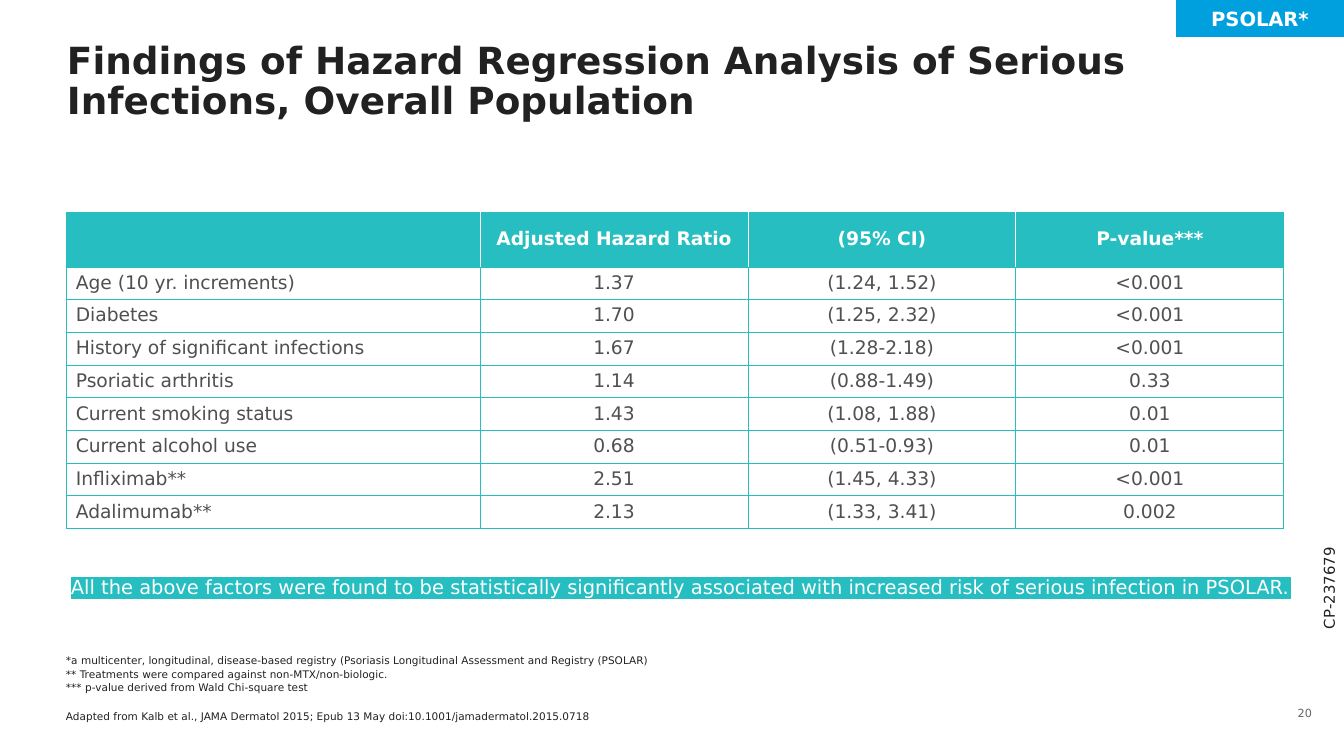
from lxml.etree import SubElement
from pptx import Presentation
from pptx.dml.color import RGBColor
from pptx.enum.shapes import MSO_SHAPE
from pptx.enum.text import MSO_ANCHOR, MSO_AUTO_SIZE, PP_ALIGN
from pptx.oxml.ns import qn
from pptx.util import Emu, Pt

FONT = "DejaVu Sans"
INK = RGBColor(0x21, 0x21, 0x21)
BODY = RGBColor(0x50, 0x50, 0x50)
GREY = RGBColor(0x64, 0x64, 0x64)
WHITE = RGBColor(0xFF, 0xFF, 0xFF)
TEAL = RGBColor(0x27, 0xBE, 0xC1)
BLUE = RGBColor(0x00, 0xA0, 0xDF)

HEADINGS = ["", "Adjusted Hazard Ratio", "(95% CI)", "P-value***"]
FACTORS = [
    ["Age (10 yr. increments)", "1.37", "(1.24, 1.52)", "<0.001"],
    ["Diabetes", "1.70", "(1.25, 2.32)", "<0.001"],
    ["History of significant infections", "1.67", "(1.28-2.18)", "<0.001"],
    ["Psoriatic arthritis", "1.14", "(0.88-1.49)", "0.33"],
    ["Current smoking status", "1.43", "(1.08, 1.88)", "0.01"],
    ["Current alcohol use", "0.68", "(0.51-0.93)", "0.01"],
    ["Infliximab**", "2.51", "(1.45, 4.33)", "<0.001"],
    ["Adalimumab**", "2.13", "(1.33, 3.41)", "0.002"],
]
COLUMN_WIDTHS = [414, 268, 268, 268]
HEADER_HEIGHT, FACTORS_HEIGHT = 55, 262

FOOTNOTES = [
    "*a multicenter, longitudinal, disease-based registry (Psoriasis Longitudinal "
    "Assessment and Registry (PSOLAR)",
    "** Treatments were compared against non-MTX/non-biologic.\v"
    "*** p-value derived from Wald Chi-square test",
    "Adapted from Kalb et al., JAMA Dermatol 2015; Epub 13 May "
    "doi:10.1001/jamadermatol.2015.0718",
]
FOOTNOTE_GAPS = [0, 1.2, 9]


def px(length):
    return Emu(round(length * 914400 / 134.4))


def style(paragraph, size, color, bold=False, align=PP_ALIGN.LEFT):
    paragraph.alignment = align
    font = paragraph.font
    font.name, font.size, font.bold = FONT, Pt(size), bold
    font.color.rgb = color


def set_frame(frame, insets, anchor=MSO_ANCHOR.MIDDLE):
    """Wrap the text and set insets (left, top, right, bottom) and anchor."""
    frame.word_wrap = True
    frame.auto_size = MSO_AUTO_SIZE.NONE
    frame.vertical_anchor = anchor
    (frame.margin_left, frame.margin_top,
     frame.margin_right, frame.margin_bottom) = map(px, insets)


def add_text(slide, box, lines, size, color, insets=(13, 7, 13, 7),
             anchor=MSO_ANCHOR.MIDDLE, align=PP_ALIGN.LEFT, gaps=(0,)):
    text_box = slide.shapes.add_textbox(*map(px, box))
    frame = text_box.text_frame
    set_frame(frame, insets, anchor)
    frame.text = "\n".join(lines)
    for paragraph, gap in zip(frame.paragraphs, gaps):
        paragraph.space_before = Pt(gap)
        style(paragraph, size, color, align=align)
    return text_box


def set_title(slide, text):
    title = slide.shapes.title
    title.left, title.top, title.width, title.height = map(px, (67, 42, 1118, 51))
    set_frame(title.text_frame, (0, 0, 0, 0), MSO_ANCHOR.TOP)
    title.text_frame.text = text
    paragraph = title.text_frame.paragraphs[0]
    paragraph.line_spacing = 0.9
    style(paragraph, 20, INK, bold=True)


def add_tag(slide, text):
    tag = slide.shapes.add_shape(MSO_SHAPE.RECTANGLE, *map(px, (1176, 0, 168, 37)))
    tag.shadow.inherit = False
    tag.fill.solid()
    tag.fill.fore_color.rgb = BLUE
    tag.line.fill.background()
    set_frame(tag.text_frame, (13, 7, 13, 7))
    tag.text_frame.text = text
    style(tag.text_frame.paragraphs[0], 10.5, WHITE, bold=True, align=PP_ALIGN.CENTER)


def set_borders(cell, colors):
    """Draw the left, right, top and bottom borders, placed before the fill."""
    properties = cell._tc.get_or_add_tcPr()
    for index, (side, color) in enumerate(zip("LRTB", colors)):
        line = SubElement(properties, qn(f"a:ln{side}"), w=str(Pt(0.5)))
        fill = SubElement(line, qn("a:solidFill"))
        SubElement(fill, qn("a:srgbClr"), val=str(color))
        properties.insert(index, line)


def fill_cell(cell, text, row, column):
    header = row == 0
    last = len(HEADINGS) - 1
    if header:
        cell.fill.solid()
        cell.fill.fore_color.rgb = TEAL
    else:
        cell.fill.background()
    set_borders(cell, [WHITE if header and column > 0 else TEAL,
                       WHITE if header and column < last else TEAL, TEAL, TEAL])
    cell.vertical_anchor = MSO_ANCHOR.MIDDLE
    cell.margin_left = cell.margin_right = px(10)
    cell.margin_top = cell.margin_bottom = px(5)
    cell.text = text
    paragraph = cell.text_frame.paragraphs[0]
    paragraph.line_spacing = 0.9
    style(paragraph, 10, WHITE if header else BODY, bold=header,
          align=PP_ALIGN.CENTER if column else PP_ALIGN.LEFT)


def add_hazard_table(slide):
    rows = [HEADINGS] + FACTORS
    table = slide.shapes.add_table(
        len(rows), len(HEADINGS), px(66), px(212),
        px(sum(COLUMN_WIDTHS)), px(HEADER_HEIGHT + FACTORS_HEIGHT)).table
    table.horz_banding = False
    for column, width in zip(table.columns, COLUMN_WIDTHS):
        column.width = px(width)
    for r, values in enumerate(rows):
        table.rows[r].height = px(FACTORS_HEIGHT / len(FACTORS) if r else HEADER_HEIGHT)
        for c, text in enumerate(values):
            fill_cell(table.cell(r, c), text, r, c)


def highlight(text_box, color):
    properties = text_box.text_frame.paragraphs[0].runs[0].font._element
    mark = SubElement(properties, qn("a:highlight"))
    SubElement(mark, qn("a:srgbClr"), val=str(color))


def main():
    presentation = Presentation()
    presentation.slide_width, presentation.slide_height = px(1344), px(756)
    slide = presentation.slides.add_slide(presentation.slide_layouts[5])

    set_title(slide, "Findings of Hazard Regression Analysis of Serious Infections, "
                     "Overall Population")
    add_text(slide, (1283, 695, 42, 36), ["20"], 6, GREY, align=PP_ALIGN.RIGHT)
    add_text(slide, (66, 653, 925, 70), FOOTNOTES, 5.6, INK, insets=(0, 0, 0, 0),
             anchor=MSO_ANCHOR.BOTTOM, gaps=FOOTNOTE_GAPS)
    add_hazard_table(slide)
    conclusion = add_text(
        slide, (66, 562, 1259, 50),
        ["All the above factors were found to be statistically significantly "
         "associated with increased risk of serious infection in PSOLAR."],
        10.4, WHITE, insets=(5, 11, 11, 11))
    highlight(conclusion, TEAL)
    add_tag(slide, "PSOLAR*")
    code = add_text(slide, (1269, 566, 120, 32), ["CP-237679"], 8, INK,
                    anchor=MSO_ANCHOR.TOP)
    code.rotation = 270

    presentation.save("out.pptx")


if __name__ == "__main__":
    main()
